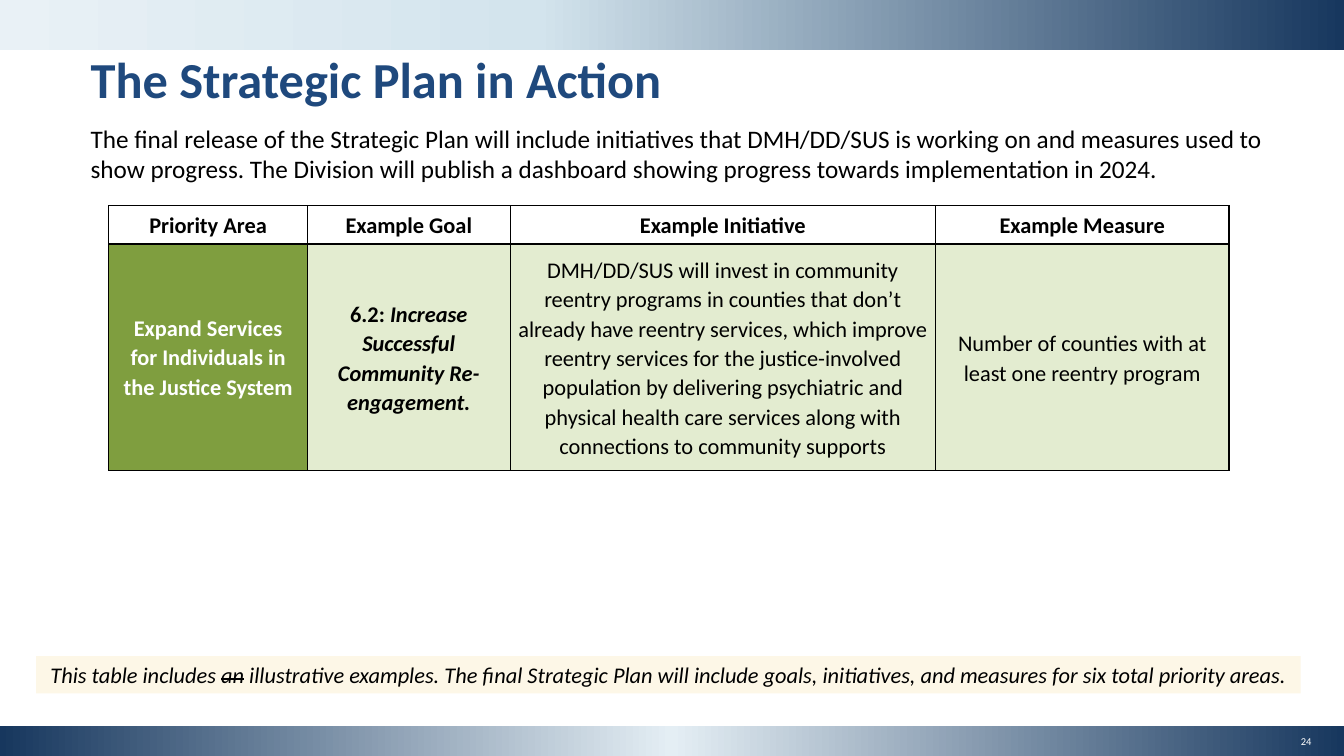
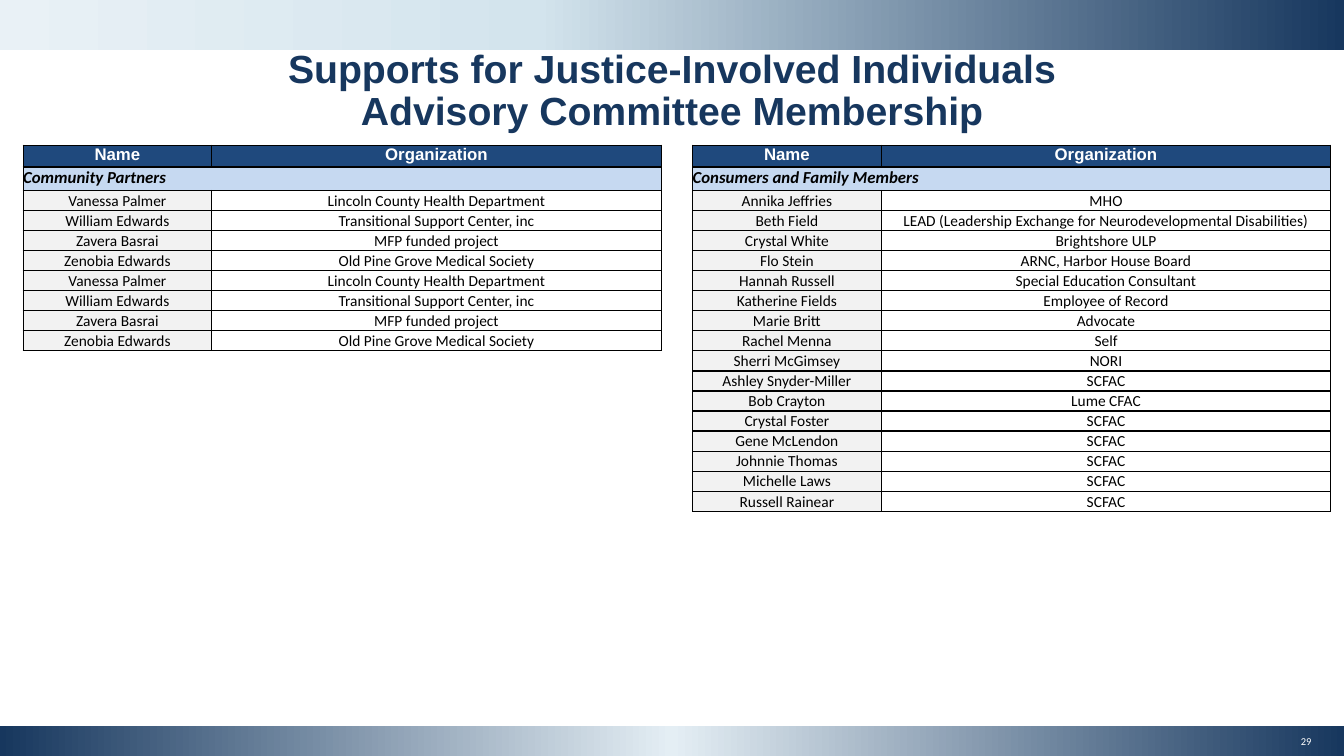
from copy import deepcopy
from dataclasses import dataclass

from lxml import etree
from pptx import Presentation
from pptx.dml.color import RGBColor as RGB
from pptx.enum.shapes import MSO_SHAPE as SHAPE
from pptx.enum.text import MSO_ANCHOR as ANCHOR, MSO_AUTO_SIZE as FIT, PP_ALIGN as ALIGN
from pptx.oxml.ns import qn
from pptx.util import Inches, Pt


@dataclass(frozen=True)
class Theme:
    """Colours, fonts and type sizes of the deck."""
    navy: str = "17375E"
    blue: str = "1F497D"
    sky: str = "C6D9F1"
    mist: str = "D3E4ED"
    frost: str = "E9F1F6"
    haze: str = "E4EEF4"
    green: str = "7F9E3F"
    pale_green: str = "E3ECD0"
    cream: str = "FDF7E7"
    grey: str = "F2F2F2"
    white: str = "FFFFFF"
    black: str = "000000"
    sans: str = "Calibri"
    heading: str = "Arial"
    title: float = 36
    long_title: float = 28
    body: float = 18
    table: float = 16
    list_head: float = 12
    list_row: float = 11
    page: float = 7.5


T = Theme()
WIDTH, HEIGHT = 13.33, 7.5
TIGHT = (0.04, 0.01, 0.04, 0)
HEAD_INSET = (0, 0, 0, 0.03)
ROW_INSET = (0.01, 0.01, 0.01, 0)

PLAN_HEADS = ("Priority Area", "Example Goal", "Example Initiative", "Example Measure")
PRIORITY = "Expand Services for Individuals in the Justice System"
GOAL = (("6.2: ", ""), ("Increase Successful Community Re-engagement.", "i"))
INITIATIVE = (
    "DMH/DD/SUS will invest in community reentry programs in counties that don’t "
    "already have reentry services, which improve reentry services for the "
    "justice-involved population by delivering psychiatric and physical health care "
    "services along with connections to community supports"
)
MEASURE = "Number of counties with at least one reentry program"
INTRO = (
    "The final release of the Strategic Plan will include initiatives that DMH/DD/SUS "
    "is working on and measures used to show progress. The Division will publish a "
    "dashboard showing progress towards implementation in 2024."
)
NOTE = (
    ("This table includes ", ""),
    ("an", "s"),
    (" illustrative examples. The final Strategic Plan will include goals, "
     "initiatives, and measures for six total priority areas.", ""),
)

PARTNERS = (
    ("Vanessa Palmer", "Lincoln County Health Department"),
    ("William Edwards", "Transitional Support Center, inc"),
    ("Zavera Basrai", "MFP funded project"),
    ("Zenobia Edwards", "Old Pine Grove Medical Society"),
) * 2
CONSUMERS = (
    ("Annika Jeffries", "MHO"),
    ("Beth Field", "LEAD (Leadership Exchange for Neurodevelopmental Disabilities)"),
    ("Crystal White", "Brightshore ULP"),
    ("Flo Stein", "ARNC, Harbor House Board"),
    ("Hannah Russell", "Special Education Consultant"),
    ("Katherine Fields", "Employee of Record"),
    ("Marie Britt", "Advocate"),
    ("Rachel Menna", "Self"),
    ("Sherri McGimsey", "NORI"),
    ("Ashley Snyder-Miller", "SCFAC"),
    ("Bob Crayton", "Lume CFAC"),
    ("Crystal Foster", "SCFAC"),
    ("Gene McLendon", "SCFAC"),
    ("Johnnie Thomas", "SCFAC"),
    ("Michelle Laws", "SCFAC"),
    ("Russell Rainear", "SCFAC"),
)


def inches(box):
    """Convert a box in inches to lengths."""
    return [Inches(v) for v in box]


def write(tf, text, size, color=T.black, font=T.sans, bold=False, italic=False,
          align=ALIGN.LEFT, spacing=None):
    """Write one paragraph from a string or from (text, mark) runs."""
    p = tf.paragraphs[0]
    p.alignment = align
    if spacing:
        p.line_spacing = spacing
    f = p.font
    f.name, f.size, f.bold, f.italic = font, Pt(size), bold, italic
    f.color.rgb = RGB.from_string(color)
    for part, mark in ((text, ""),) if isinstance(text, str) else text:
        r = p.add_run()
        r.text = part
        if mark == "i":
            r.font.italic = True
        elif mark == "s":
            r._r.get_or_add_rPr().set("strike", "sngStrike")


def add_band(s, box, stops):
    """Add a full-width bar whose gradient runs from right to left."""
    sp = s.shapes.add_shape(SHAPE.RECTANGLE, *inches(box))
    sp.shadow.inherit = False
    sp.line.fill.background()
    sp.fill.gradient()
    sp.fill.gradient_angle = 180
    gs_list = next(sp._element.iter(qn("a:gsLst")))
    gs_list.append(deepcopy(gs_list[-1]))
    for stop, (position, color) in zip(sp.fill.gradient_stops, stops):
        stop.position = position
        stop.color.rgb = RGB.from_string(color)
    return sp


def move_bands_to_layout(s):
    """Draw the top and bottom bands and hand them to the layout."""
    layout = s.slide_layout
    for ph in list(layout.placeholders):
        if ph.placeholder_format.idx:
            ph._element.getparent().remove(ph._element)
    bands = (
        ((0, HEIGHT - 0.3, WIDTH, 0.3), ((0, T.navy), (0.5, T.haze), (1, T.navy))),
        ((0, 0, WIDTH, 0.5), ((0, T.navy), (0.6, T.mist), (1, T.frost))),
    )
    for box, stops in bands:
        layout.shapes._spTree.insert(2, add_band(s, box, stops)._element)


def add_text(s, box, text, size, **style):
    """Add a wrapping text box."""
    tf = s.shapes.add_textbox(*inches(box)).text_frame
    tf.word_wrap = True
    write(tf, text, size, **style)
    return tf


def set_title(s, box, text, size, **style):
    """Place and format the title placeholder."""
    sp = s.shapes.title
    sp.left, sp.top, sp.width, sp.height = inches(box)
    tf = sp.text_frame
    tf.auto_size, tf.vertical_anchor, tf.word_wrap = FIT.NONE, ANCHOR.TOP, True
    write(tf, text, size, bold=True, spacing=0.9, **style)


def add_page_number(s, number):
    """Write the page number in the bottom band."""
    tf = add_text(s, (12.82, 7.28, 0.27, 0.15), str(number), T.page,
                  color=T.white, align=ALIGN.CENTER)
    tf.vertical_anchor = ANCHOR.MIDDLE
    tf.margin_left = tf.margin_right = 0
    tf.margin_top = tf.margin_bottom = Inches(0.01)


def add_grid(s, left, top, cols, rows):
    """Add a plain table with the given column widths and row heights."""
    box = inches((left, top, sum(cols), sum(rows)))
    table = s.shapes.add_table(len(rows), len(cols), *box).table
    table.first_row = table.horz_banding = False
    for col, width in zip(table.columns, cols):
        col.width = Inches(width)
    for row, height in zip(table.rows, rows):
        row.height = Inches(height)
    return table


def fill_cell(cell, text, fill, inset, size, align=ALIGN.CENTER, **style):
    """Give a cell its black borders, fill, insets and text."""
    tc_pr = cell._tc.get_or_add_tcPr()
    for side in ("a:lnL", "a:lnR", "a:lnT", "a:lnB"):
        ln = etree.SubElement(tc_pr, qn(side), w=str(Pt(1)))
        solid = etree.SubElement(ln, qn("a:solidFill"))
        etree.SubElement(solid, qn("a:srgbClr"), val=T.black)
    cell.fill.solid()
    cell.fill.fore_color.rgb = RGB.from_string(fill)
    cell.vertical_anchor = ANCHOR.MIDDLE
    (cell.margin_left, cell.margin_top,
     cell.margin_right, cell.margin_bottom) = inches(inset)
    write(cell.text_frame, text, size, align=align, **style)


def add_plan_table(s, left, top):
    """Add the table that follows one priority area to its measure."""
    table = add_grid(s, left, top, (1.97, 2.01, 4.22, 2.91), (0.38, 2.25))
    for c, head in enumerate(PLAN_HEADS):
        fill_cell(table.cell(0, c), head, T.white, TIGHT, T.table, bold=True, spacing=1.07)
    cells = (
        (PRIORITY, T.green, (0.1, 0.05, 0.1, 0.05), T.white, True),
        (GOAL, T.pale_green, TIGHT, T.black, True),
        (INITIATIVE, T.pale_green, TIGHT, T.black, False),
        (MEASURE, T.pale_green, TIGHT, T.black, False),
    )
    for c, (text, fill, inset, color, bold) in enumerate(cells):
        fill_cell(table.cell(1, c), text, fill, inset, T.table, color=color,
                  bold=bold, spacing=1.07)


def add_member_table(s, left, top, group, members):
    """Add a list of members and organizations under a group heading."""
    rows = [0.21] * 2 + [0.18] * len(members)
    table = add_grid(s, left, top, (1.87, 4.46), rows)
    for c, head in enumerate(("Name", "Organization")):
        fill_cell(table.cell(0, c), head, T.blue, HEAD_INSET, T.list_head,
                  color=T.white, font=T.heading, bold=True)
    table.cell(1, 0).merge(table.cell(1, 1))
    for c, text in enumerate((group, ())):
        fill_cell(table.cell(1, c), text, T.sky, HEAD_INSET, T.list_head,
                  align=ALIGN.LEFT, bold=True, italic=True)
    for r, member in enumerate(members, 2):
        for c, fill in enumerate((T.grey, T.white)):
            fill_cell(table.cell(r, c), member[c], fill, ROW_INSET, T.list_row)


def add_note(s, box):
    """Add the tinted note below the table."""
    sp = s.shapes.add_shape(SHAPE.RECTANGLE, *inches(box))
    sp.shadow.inherit = False
    sp.line.fill.background()
    sp.fill.solid()
    sp.fill.fore_color.rgb = RGB.from_string(T.cream)
    sp.text_frame.word_wrap = True
    write(sp.text_frame, NOTE, T.table, italic=True, align=ALIGN.CENTER)


def build_plan_slide(s):
    """Build the slide on the strategic plan."""
    set_title(s, (0.8, 0.5, 11.66, 0.6), "The Strategic Plan in Action", T.title, color=T.blue)
    add_text(s, (0.8, 1.17, 12.02, 1.01), INTRO, T.body)
    add_plan_table(s, 1.08, 2.04)
    add_note(s, (0.36, 6.51, 12.54, 0.37))
    add_page_number(s, 24)


def build_members_slide(s):
    """Build the slide on committee membership."""
    set_title(s, (1.93, 0.44, 9.47, 0.6),
              "Supports for Justice-Involved Individuals Advisory Committee Membership",
              T.long_title, color=T.navy, font=T.heading, align=ALIGN.CENTER)
    add_member_table(s, 0.23, 1.44, "Community Partners", PARTNERS)
    add_member_table(s, 6.87, 1.44, "Consumers and Family Members", CONSUMERS)
    add_page_number(s, 29)


def main():
    """Build and save the deck."""
    prs = Presentation()
    prs.slide_width, prs.slide_height = Inches(WIDTH), Inches(HEIGHT)
    layout = prs.slide_layouts[5]
    plan, members = (prs.slides.add_slide(layout) for _ in range(2))
    move_bands_to_layout(plan)
    build_plan_slide(plan)
    build_members_slide(members)
    prs.save("out.pptx")


if __name__ == "__main__":
    main()
